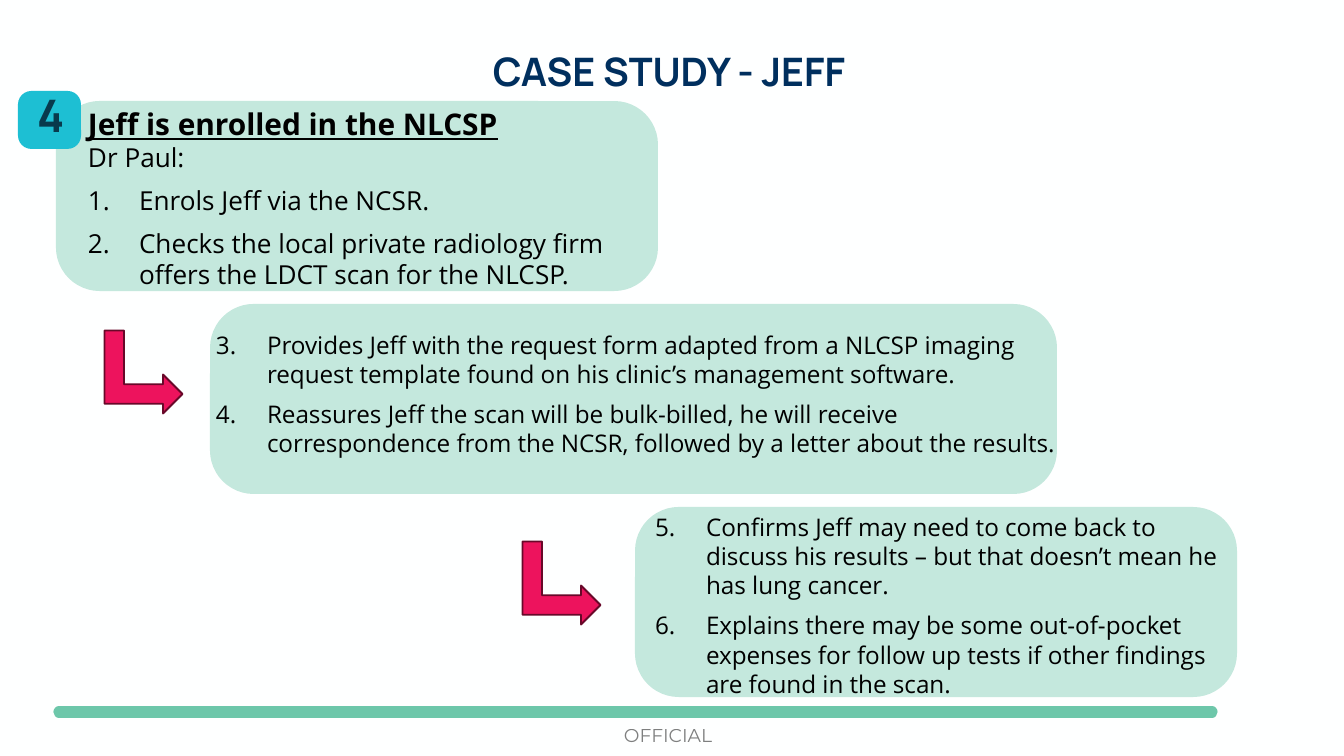
"""Build the case study slide with three stepped cards."""
from lxml import etree
from pptx import Presentation
from pptx.dml.color import RGBColor
from pptx.enum.shapes import MSO_CONNECTOR, MSO_SHAPE
from pptx.enum.text import PP_ALIGN
from pptx.oxml.ns import qn
from pptx.util import Pt

ROUND, BENT = MSO_SHAPE.ROUNDED_RECTANGLE, MSO_SHAPE.BENT_UP_ARROW
STRAIGHT = MSO_CONNECTOR.STRAIGHT
LEFT, CENTER = PP_ALIGN.LEFT, PP_ALIGN.CENTER

PAPER = RGBColor(0xFE, 0xFF, 0xFF)
BLACK = RGBColor(0x00, 0x00, 0x00)
NAVY = RGBColor(0x00, 0x2F, 0x5E)
MINT = RGBColor(0xC4, 0xE8, 0xDD)
GREEN = RGBColor(0x6D, 0xC7, 0xAA)
CYAN = RGBColor(0x1D, 0xBF, 0xD3)
DEEP = RGBColor(0x08, 0x3A, 0x4D)
PINK = RGBColor(0xED, 0x13, 0x5D)
WINE = RGBColor(0x68, 0x08, 0x29)

TITLE = "CASE STUDY - JEFF "
BADGE = "4"
FOOTER = "OFFICIAL"
HEADS = ["Jeff is enrolled in the NLCSP", "Dr Paul:"]
# card box, text box, text size, lead lines, numbered steps
CARDS = [
    ((56, 101, 602, 190), (78, 101, 602, 234), 14, HEADS, [
        "Enrols Jeff via the NCSR.",
        "Checks the local private radiology firm offers the LDCT scan for the NLCSP.",
    ]),
    ((210, 304, 847, 190), (206, 325, 871, 177), 13, [], [
        "Provides Jeff with the request form adapted from a NLCSP imaging request "
        "template found on his clinic’s management software.",
        "Reassures Jeff the scan will be bulk-billed, he will receive correspondence "
        "from the NCSR, followed by a letter about the results.",
    ]),
    ((635, 507, 602, 190), (645, 507, 602, 237), 13, [], [
        "Confirms Jeff may need to come back to discuss his results – but that "
        "doesn’t mean he has lung cancer.",
        "Explains there may be some out-of-pocket expenses for follow up tests if "
        "other findings are found in the scan.",
    ]),
]
ARROWS = [(102, 333, 83, 78), (520, 544, 83, 78)]
SCALE = 914400 / 134.4
INDENT = 51


def px(num):
    return round(num * SCALE)


def add_shape(slide, kind, box, fill, edge=None):
    shape = slide.shapes.add_shape(kind, *map(px, box))
    shape.shadow.inherit = False
    shape.fill.solid()
    shape.fill.fore_color.rgb = fill
    if edge is None:
        shape.line.fill.background()
    else:
        shape.line.color.rgb = edge
        shape.line.width = Pt(1)
    if kind == ROUND:
        shape.adjustments[0] = 0.23
    return shape


def style(para, size, face, color, bold=False):
    for run in para.runs:
        font = run.font
        font.size, font.name, font.bold = Pt(size), face, bold
        font.color.rgb = color


def add_text(slide, box, text, size, face, color, bold=False, inset=(10, 5), align=LEFT):
    shape = slide.shapes.add_textbox(*map(px, box))
    frame = shape.text_frame
    frame.word_wrap = True
    frame.margin_left = frame.margin_right = px(inset[0])
    frame.margin_top = frame.margin_bottom = px(inset[1])
    frame.text = text
    for para in frame.paragraphs:
        para.alignment = align
        style(para, size, face, color, bold)
    return frame.paragraphs


def number(para, start):
    props = para._p.get_or_add_pPr()
    props.set("marL", str(px(INDENT)))
    props.set("indent", str(-px(INDENT)))
    etree.SubElement(props, qn("a:buFont"), typeface="+mj-lt")
    etree.SubElement(props, qn("a:buAutoNum"), type="arabicPeriod", startAt=str(start))


def add_card(slide, card, start):
    box, area, size, heads, steps = card
    add_shape(slide, ROUND, box, MINT)
    paras = add_text(slide, area, "\n".join(heads + steps), size, "Open Sans", BLACK)
    for para in paras:
        para.space_after = Pt(6)
    for para in paras[len(heads):]:
        number(para, start)
    if heads:
        style(paras[0], 16, "Open Sans", BLACK, True)
        paras[0].runs[0].font.underline = True
        paras[0].space_after = Pt(0)


def add_footer(slide):
    rule = slide.shapes.add_connector(STRAIGHT, px(59), px(712), px(1212), px(712))
    rule.line.color.rgb = GREEN
    rule.line.width = Pt(6)
    rule.line._get_or_add_ln().set("cap", "rnd")
    etree.SubElement(rule._element.spPr, qn("a:effectLst"))
    para = add_text(slide, (624, 724, 102, 23), FOOTER, 10, "Montserrat", BLACK, inset=(0, 0))[0]
    tint = para._p.find(".//" + qn("a:srgbClr"))
    etree.SubElement(tint, qn("a:alpha"), val="50000")


def main():
    deck = Presentation()
    deck.slide_width, deck.slide_height = px(1344), px(756)
    slide = deck.slides.add_slide(deck.slide_layouts[6])
    slide.background.fill.solid()
    slide.background.fill.fore_color.rgb = PAPER
    add_footer(slide)
    add_text(slide, (1, 42, 1344, 58), TITLE, 21, "Manrope", NAVY, True, align=CENTER)
    start = 1
    for card in CARDS:
        add_card(slide, card, start)
        start += len(card[-1])
    add_shape(slide, ROUND, (18, 91, 63, 58), CYAN)
    add_text(slide, (24, 81, 66, 67), BADGE, 24, "Manrope", DEEP, True, inset=(13, 7))
    for box in ARROWS:
        add_shape(slide, BENT, box, PINK, WINE).rotation = 90
    deck.save("out.pptx")


if __name__ == "__main__":
    main()
